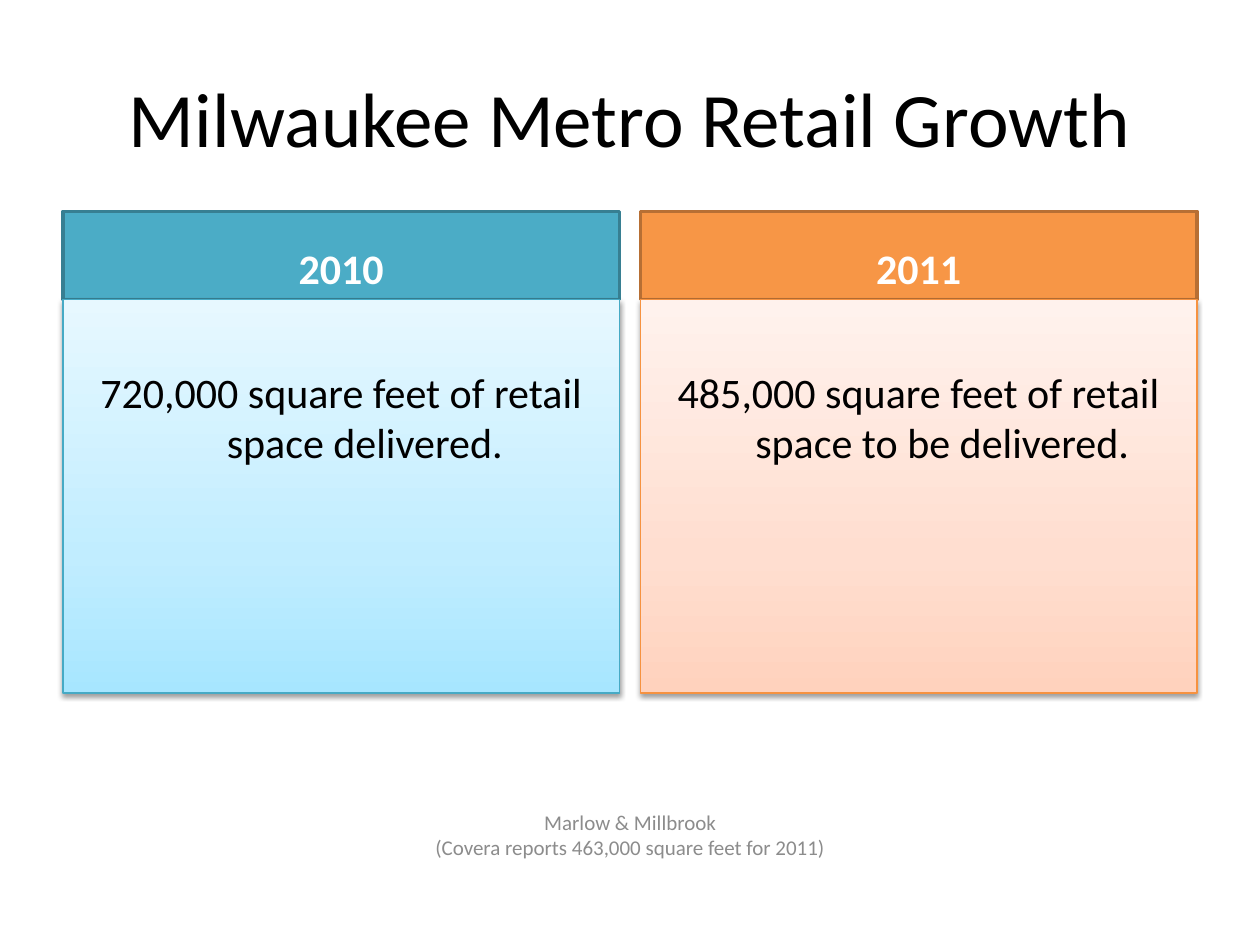
from lxml.etree import SubElement as Sub
from pptx import Presentation
from pptx.dml.color import RGBColor
from pptx.enum.shapes import MSO_SHAPE as Shape
from pptx.enum.text import MSO_ANCHOR as Anchor, PP_ALIGN as Align
from pptx.oxml.ns import qn
from pptx.util import Cm, Pt


def paint(color, code):
    color.rgb = RGBColor.from_string(code)


def stop(node, code):
    return Sub(node, qn("a:srgbClr"), val=code)


class Deck:
    font = "Calibri"
    fit = {"word_wrap": True, "margin_left": Cm(0.25), "margin_right": Cm(0.25),
           "margin_top": Cm(0.13), "margin_bottom": Cm(0.13)}

    def __init__(self, wide, high):
        self.prs = Presentation()
        self.prs.slide_width, self.prs.slide_height = Cm(wide), Cm(high)
        self.slide = self.prs.slides.add_slide(self.prs.slide_layouts[6])

    def letter(self, shape, lines, size, code, bold=False, **frame):
        """Fill a shape with centred lines; frame overrides the text frame defaults."""
        text = shape.text_frame
        for key, val in (self.fit | frame).items():
            setattr(text, key, val)
        text.text = "\n".join(lines)
        look = {"name": self.font, "size": Pt(size), "bold": bold}
        for para in text.paragraphs:
            para.alignment = Align.CENTER
            for key, val in look.items():
                setattr(para.font, key, val)
            paint(para.font.color, code)
        return text

    def label(self, box, lines, size, code):
        shape = self.slide.shapes.add_textbox(*map(Cm, box))
        self.letter(shape, lines, size, code, vertical_anchor=Anchor.MIDDLE)

    def rect(self, box, edge, width):
        shape = self.slide.shapes.add_shape(Shape.RECTANGLE, *map(Cm, box))
        shape.shadow.inherit = False
        paint(shape.line.color, edge)
        shape.line.width = Pt(width)
        return shape

    def head(self, box, text, fill, edge):
        shape = self.rect(box, edge, 2)
        shape.fill.solid()
        paint(shape.fill.fore_color, fill)
        self.letter(shape, [text], 24, "FFFFFF", True, vertical_anchor=Anchor.BOTTOM)

    def panel(self, box, text, tints, edge):
        shape = self.rect(box, edge, 0.75)
        self.fade(shape, tints)
        self.shade(shape)
        frame = self.letter(shape, [text], 24, "000000",
                            vertical_anchor=Anchor.TOP, margin_top=Cm(1.34))
        props = frame.paragraphs[0]._p.get_or_add_pPr()
        props.set("marL", str(Cm(0.95)))
        props.set("indent", str(Cm(-0.95)))

    def fade(self, shape, tints):
        """Lay a gradient that runs from the bottom edge to the top."""
        shape.fill.gradient()
        grad = shape._element.spPr.find(qn("a:gradFill"))
        for node in list(grad):
            grad.remove(node)
        stops = Sub(grad, qn("a:gsLst"))
        for pos, code in zip((0, 35, 100), tints):
            stop(Sub(stops, qn("a:gs"), pos=str(pos * 1000)), code)
        Sub(grad, qn("a:lin"), ang=str(270 * 60000), scaled="0")

    def shade(self, shape):
        """Drop a soft shadow straight down."""
        effects = shape._element.spPr.find(qn("a:effectLst"))
        drop = Sub(effects, qn("a:outerShdw"), blurRad=str(Pt(3.1)),
                   dist=str(Pt(1.6)), dir=str(90 * 60000), rotWithShape="0")
        Sub(stop(drop, "000000"), qn("a:alpha"), val="38000")


def main():
    deck = Deck(25.4, 19.05)
    deck.label((1.27, 0.76, 22.86, 3.18), ["Milwaukee Metro Retail Growth"], 44, "000000")

    left, top, wide, gap = 1.27, 4.26, 11.22, 0.42
    bar, body = 1.78, 7.93
    years = [
        ("2010", "720,000 square feet of retail space delivered.",
         "4BACC6", "377F92", ("A7E6FF", "C1EDFF", "E7F8FF"), "46AAC5"),
        ("2011", "485,000 square feet of retail space to be delivered.",
         "F79646", "B76F34", ("FFD2BD", "FFDED0", "FFF2ED"), "F69240"),
    ]
    for col, (year, note, fill, edge, tints, rim) in enumerate(years):
        x = left + col * (wide + gap)
        deck.head((x, top, wide, bar), year, fill, edge)
        deck.panel((x, top + bar, wide, body), note, tints, rim)

    deck.label((8.26, 15.88, 8.89, 1.9),
               ["Marlow & Millbrook", "(Covera reports 463,000 square feet for 2011)"],
               12, "8C8C8C")
    deck.prs.save("out.pptx")


if __name__ == "__main__":
    main()
